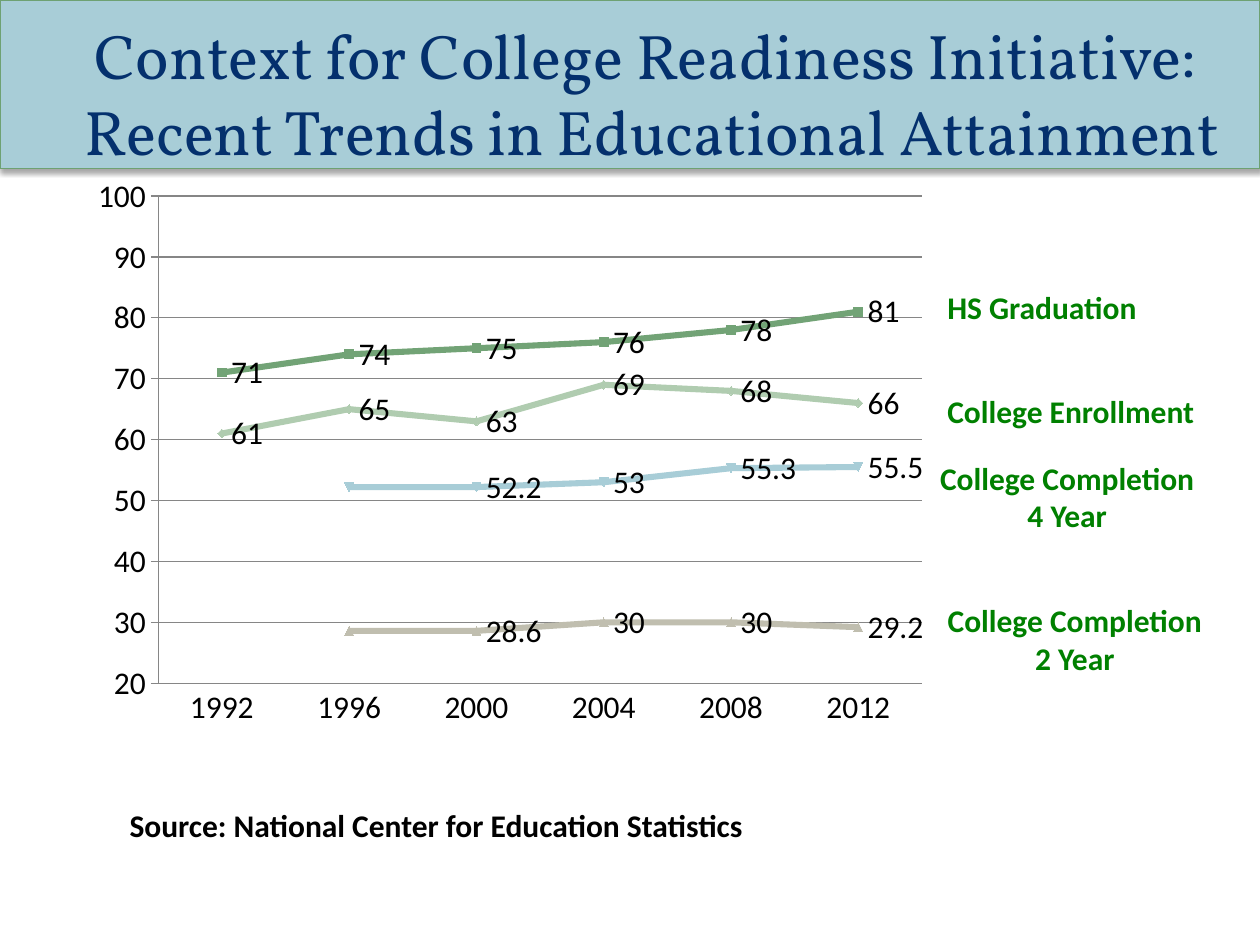
from lxml import etree
from pptx import Presentation
from pptx import util as u
from pptx.chart import data
from pptx.dml import color
from pptx.enum import chart as ch
from pptx.enum import shapes, text
from pptx.oxml import ns, parse_xml

SHADOW = (
    f'<a:effectLst {ns.nsdecls("a")}><a:outerShdw blurRad="39370" dist="22860" '
    'dir="5400000" rotWithShape="0"><a:srgbClr val="000000">'
    '<a:alpha val="35000"/></a:srgbClr></a:outerShdw></a:effectLst>'
)


def tint(code):
    return color.RGBColor.from_string(code)


class Deck:
    """Style and current slide, on a grid of 100 columns by 75 rows."""

    navy, green, black, gray = "04306D", "008000", "000000", "868686"
    body, head = "Calibri", "Vollkorn"

    def __init__(self):
        self.prs = Presentation()
        self.prs.slide_width, self.prs.slide_height = u.Inches(10), u.Inches(7.5)
        self.slide = self.prs.slides.add_slide(self.prs.slide_layouts[6])

    def grid(self, *cells):
        return [u.Inches(cell / 10) for cell in cells]

    def band(self, box, fill, edge):
        shape = self.slide.shapes.add_shape(
            shapes.MSO_SHAPE.RECTANGLE, *self.grid(*box))
        shape.fill.solid()
        shape.fill.fore_color.rgb = tint(fill)
        shape.line.color.rgb = tint(edge)
        shape.line.width = u.Pt(0.75)
        shape._element.spPr.append(parse_xml(SHADOW))

    def label(self, box, words, hue, size=18, face=body, bold=True,
              mid=False, wrap=False):
        frame = self.slide.shapes.add_textbox(*self.grid(*box)).text_frame
        frame.word_wrap = wrap
        frame.text = words
        if wrap:
            frame.vertical_anchor = text.MSO_ANCHOR.MIDDLE
        for para in frame.paragraphs:
            para.alignment = text.PP_ALIGN.CENTER if mid else text.PP_ALIGN.LEFT
            for run in para.runs:
                font = run.font
                font.size, font.name, font.bold = u.Pt(size), face, bold
                font.color.rgb = tint(hue)

    def lines(self, box, years, rows, hues, area):
        table = data.CategoryChartData()
        table.categories = years
        for name, vals in rows.items():
            table.add_series(name, vals)
        chart = self.slide.shapes.add_chart(
            ch.XL_CHART_TYPE.LINE_MARKERS, *self.grid(*box), table).chart
        chart.has_legend = chart.has_title = False
        chart.font.size, chart.font.name = u.Pt(18), self.body
        chart.font.color.rgb = tint(self.black)
        self.axes(chart)
        self.place(chart, area)
        for row, hue in zip(chart.plots[0].series, hues):
            self.trend(row, hue)

    def axes(self, chart):
        axis = chart.value_axis
        axis.minimum_scale, axis.maximum_scale, axis.major_unit = 20, 100, 10
        axis.major_tick_mark = ch.XL_TICK_MARK.OUTSIDE
        chart.category_axis.major_tick_mark = ch.XL_TICK_MARK.NONE
        for part in (axis, axis.major_gridlines, chart.category_axis):
            part.format.line.color.rgb = tint(self.gray)
            part.format.line.width = u.Pt(0.75)

    def place(self, chart, area):
        plot = chart._chartSpace.chart.plotArea
        for old in plot.findall(ns.qn("c:layout")):
            plot.remove(old)
        layout = etree.Element(ns.qn("c:layout"))
        spot = etree.SubElement(layout, ns.qn("c:manualLayout"))
        pairs = [("layoutTarget", "inner"), ("xMode", "edge"), ("yMode", "edge")]
        for tag, val in pairs + list(zip("xywh", area)):
            etree.SubElement(spot, ns.qn(f"c:{tag}"), val=str(val))
        plot.insert(0, layout)

    def trend(self, row, hue):
        row.smooth = False
        row.format.line.color.rgb = tint(hue)
        row.format.line.width = u.Pt(3.5)
        mark = row.marker.format
        mark.fill.solid()
        mark.fill.fore_color.rgb = tint(hue)
        mark.line.color.rgb = tint(hue)
        tags = row.data_labels
        tags.show_value = True
        tags.position = ch.XL_LABEL_POSITION.RIGHT
        if row.values[0] is None:
            skip = etree.Element(ns.qn("c:dLbl"))
            etree.SubElement(skip, ns.qn("c:idx"), val="1")
            etree.SubElement(skip, ns.qn("c:delete"), val="1")
            tags._element.insert(0, skip)


def main():
    deck = Deck()
    deck.band((0, 0, 100, 13.4), "A8CDD7", "6EA172")
    deck.label((3.5, 1.7, 96.5, 11.3),
               "Context for College Readiness Initiative: \v"
               "Recent Trends in Educational Attainment",
               deck.navy, 36, deck.head, bold=False, mid=True, wrap=True)
    deck.lines((3.5, 13.7, 69.8, 46.6),
               [str(year) for year in range(1992, 2013, 4)],
               {"HS Graduation": (71, 74, 75, 76, 78, 81),
                "College Enrollment": (61, 65, 63, 69, 68, 66),
                "College Completion 4 Year": (None, 52.2, 52.2, 53, 55.3, 55.5),
                "College Completion 2 Year": (None, 28.6, 28.6, 30, 30, 29.2)},
               ("72A376", "B0CCB0", "A8CDD7", "C0BEAF"),
               (0.13, 0.04, 0.87, 0.83))
    deck.label((74.2, 22.4, 17.3, 4), "HS Graduation", deck.green)
    deck.label((74.2, 30.6, 21.9, 4), "College Enrollment", deck.green)
    for left, top, span in ((73.1, 35.9, 4), (73.7, 47.2, 2)):
        deck.label((left, top, 23.2, 7.1), f"College Completion\n{span} Year",
                   deck.green, mid=True)
    deck.label((9.3, 63.5, 53.4, 4),
               "Source: National Center for Education Statistics", deck.black)
    deck.prs.save("out.pptx")


if __name__ == "__main__":
    main()
